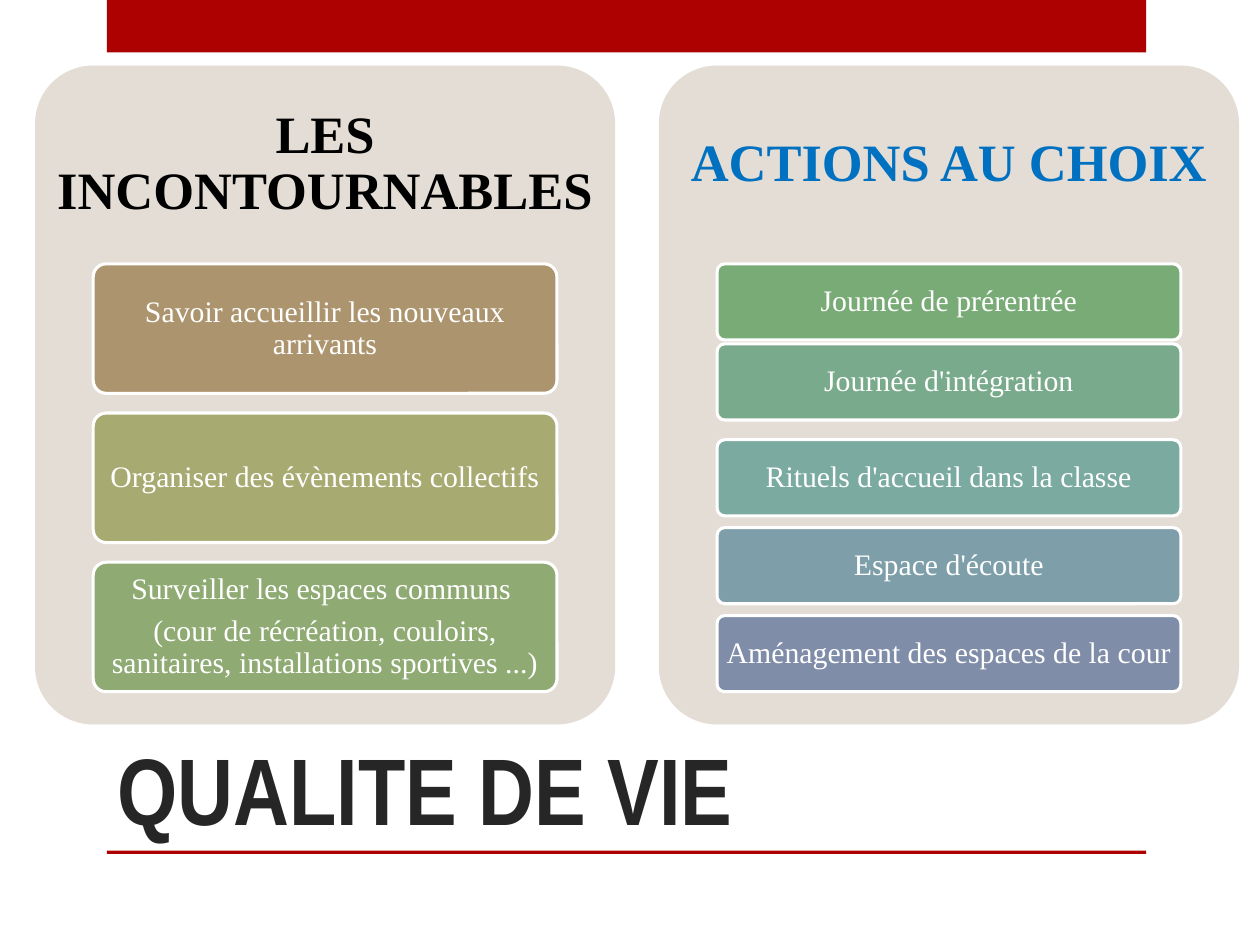
from dataclasses import dataclass

from pptx import Presentation
from pptx.dml.color import RGBColor
from pptx.enum.shapes import MSO_SHAPE
from pptx.enum.text import MSO_ANCHOR, MSO_AUTO_SIZE, PP_ALIGN
from pptx.util import Pt


@dataclass(frozen=True)
class Theme:
    """Colours, fonts and type sizes of the slide."""

    accent: str = "AD0101"
    panel: str = "E3DDD5"
    white: str = "FFFFFF"
    black: str = "000000"
    blue: str = "0070C0"
    title: str = "262626"
    title_font: str = "Arial Narrow"
    text_font: str = "Times New Roman"
    title_size: float = 54
    heading_size: float = 30
    card_size: float = 17


THEME = Theme()
PANEL_TOP, PANEL_WIDTH, PANEL_HEIGHT = 37.5, 331.5, 376.5
HEADING_HEIGHT = 113
CARD_INDENT, CARD_WIDTH = 33.25, 265
CARDS_TOP = 150.75

ESSENTIALS = [
    ("Savoir accueillir les nouveaux arrivants", "AC956E"),
    ("Organiser des évènements collectifs", "A8AB71"),
    ("Surveiller les espaces communs \n"
     "(cour de récréation, couloirs, sanitaires, installations sportives ...)", "8FAB73"),
]
CHOICES = [
    ("Journée de prérentrée", "79AB76"),
    ("Journée d'intégration", "78AA8B"),
    ("Rituels d'accueil dans la classe", "7BAAA1"),
    ("Espace d'écoute", "7E9FA9"),
    ("Aménagement des espaces de la cour", "808DA9"),
]


def add_block(page, kind, bounds, fill):
    """Add a plain filled shape without line or shadow."""
    block = page.shapes.add_shape(kind, *map(Pt, bounds))
    block.shadow.inherit = False
    block.fill.solid()
    block.fill.fore_color.rgb = RGBColor.from_string(fill)
    block.line.fill.background()
    if kind == MSO_SHAPE.ROUNDED_RECTANGLE:
        block.adjustments[0] = 0.1
    return block


def style_span(span, font, size, colour, bold=False):
    """Format one run of text."""
    span.font.name = font
    span.font.size = Pt(size)
    span.font.bold = bold
    span.font.color.rgb = RGBColor.from_string(colour)


def write_centred(box, text, size, colour, margins, bold=False):
    """Write centred text in the middle of a box."""
    frame = box.text_frame
    frame.word_wrap = True
    frame.vertical_anchor = MSO_ANCHOR.MIDDLE
    frame.margin_left = frame.margin_right = Pt(margins[0])
    frame.margin_top = frame.margin_bottom = Pt(margins[1])
    frame.text = text
    for para in frame.paragraphs:
        para.alignment = PP_ALIGN.CENTER
        para.line_spacing = 0.9
        para.space_after = Pt(6)
        for span in para.runs:
            style_span(span, THEME.text_font, size, colour, bold)


def add_title(page, text):
    """Place and format the title placeholder."""
    title = page.shapes.title
    title.left, title.top, title.width, title.height = map(Pt, (60, 360, 534, 126))
    frame = title.text_frame
    frame.text = text
    frame.word_wrap = True
    frame.auto_size = MSO_AUTO_SIZE.NONE
    frame.vertical_anchor = MSO_ANCHOR.BOTTOM
    para = frame.paragraphs[0]
    para.alignment = PP_ALIGN.LEFT
    style_span(para.runs[0], THEME.title_font, THEME.title_size, THEME.title, True)


def add_panel(page, left, heading, colour):
    """Add a rounded panel with its heading."""
    add_block(page, MSO_SHAPE.ROUNDED_RECTANGLE,
              (left, PANEL_TOP, PANEL_WIDTH, PANEL_HEIGHT), THEME.panel)
    box = page.shapes.add_textbox(*map(Pt, (left, PANEL_TOP, PANEL_WIDTH, HEADING_HEIGHT)))
    write_centred(box, heading, THEME.heading_size, colour, (8.6, 8.6), True)


def add_cards(page, panel_left, cards, height, pitch, shifts):
    """Stack cards at an even pitch, with shifts for any that are off it."""
    for index, (text, fill) in enumerate(cards):
        top = CARDS_TOP + index * pitch + shifts.get(index, 0)
        card = add_block(page, MSO_SHAPE.ROUNDED_RECTANGLE,
                         (panel_left + CARD_INDENT, top, CARD_WIDTH, height), fill)
        card.line.color.rgb = RGBColor.from_string(THEME.white)
        card.line.width = Pt(1.75)
        write_centred(card, text, THEME.card_size, THEME.white, (3.6, 2.9))


def main():
    """Build the slide and save it."""
    deck = Presentation()
    deck.slide_width, deck.slide_height = Pt(720), Pt(540)
    page = deck.slides.add_slide(deck.slide_layouts[5])
    for top, height in ((0, 30), (486, 2)):
        add_block(page, MSO_SHAPE.RECTANGLE, (61, top, 594, height), THEME.accent)
    add_title(page, "QUALITE DE VIE")
    add_panel(page, 20, "LES INCONTOURNABLES", THEME.black)
    add_cards(page, 20, ESSENTIALS, 74, 85.25, {})
    add_panel(page, 376.5, "ACTIONS AU CHOIX", THEME.blue)
    add_cards(page, 376.5, CHOICES, 43.5, 50.25, {1: -4.5})
    deck.save("out.pptx")


if __name__ == "__main__":
    main()
